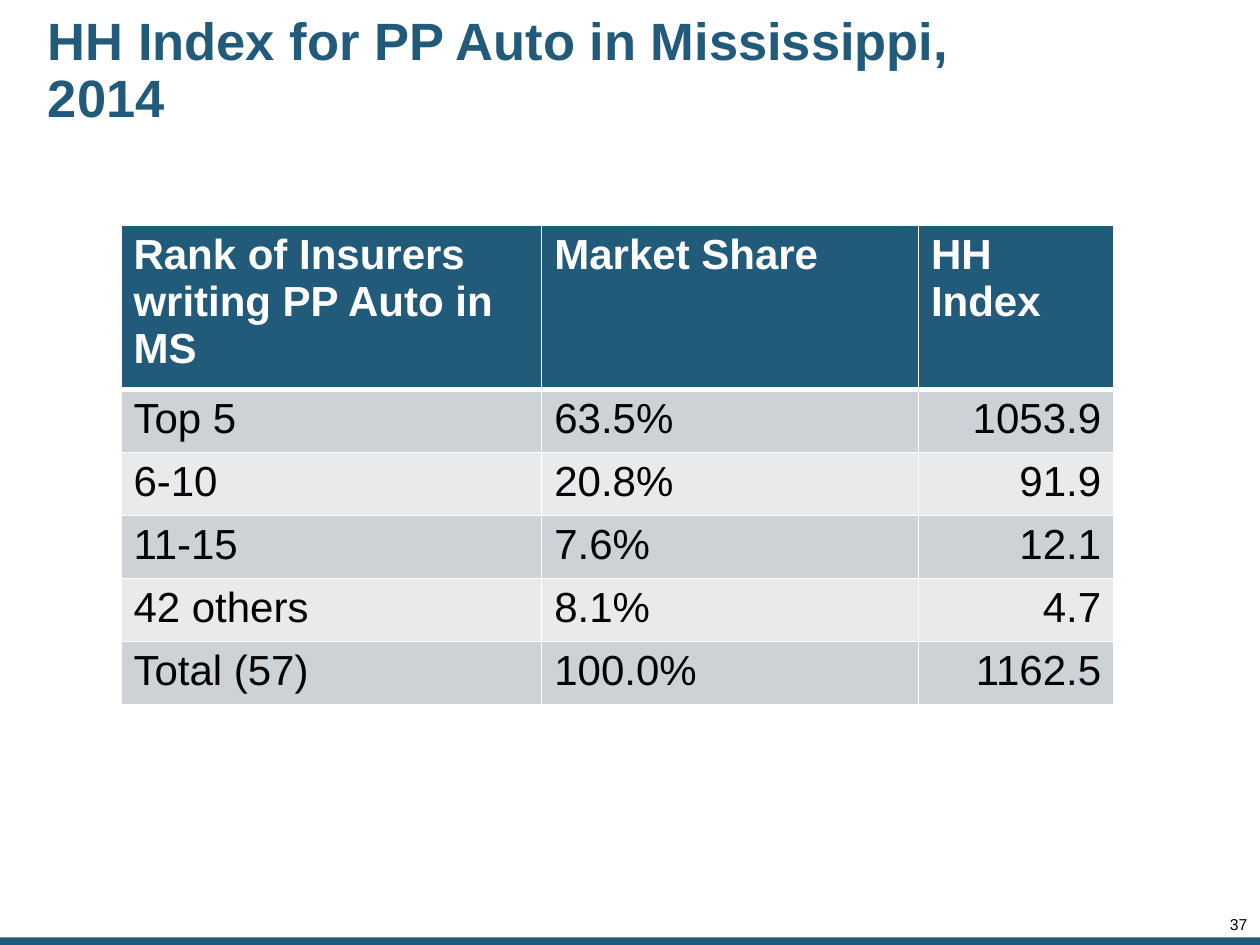
from pptx import Presentation
from pptx.dml.color import RGBColor
from pptx.enum.shapes import MSO_SHAPE
from pptx.enum.text import MSO_ANCHOR, PP_ALIGN
from pptx.oxml.ns import qn
from pptx.util import Inches, Pt
from lxml import etree

RECTANGLE = MSO_SHAPE.RECTANGLE
MIDDLE, TOP = MSO_ANCHOR.MIDDLE, MSO_ANCHOR.TOP
LEFT, RIGHT = PP_ALIGN.LEFT, PP_ALIGN.RIGHT

FONT = "Arial"
COLORS = {"blue": "225A7A", "white": "FFFFFF", "black": "000000",
          "dark_band": "CDD2D7", "light_band": "E8EAEC"}

TITLE = "HH Index for PP Auto in Mississippi, 2014"
PAGE_NUMBER = "37"
ROWS = [
    ("Rank of Insurers writing PP Auto in MS", "Market Share", "HH Index"),
    ("Top 5", "63.5%", "1053.9"),
    ("6-10", "20.8%", "91.9"),
    ("11-15", "7.6%", "12.1"),
    ("42 others", "8.1%", "4.7"),
    ("Total (57)", "100.0%", "1162.5"),
]
COLUMN_WIDTHS = (3.34, 2.99, 1.55)
HEADER_HEIGHT, ROW_HEIGHT = 1.21, 0.47


def rgb(name):
    return RGBColor.from_string(COLORS[name])


def write(tf, text, size, color, bold=False, align=LEFT):
    tf.text = text
    p = tf.paragraphs[0]
    p.alignment = align
    font = p.runs[0].font
    font.name, font.size, font.bold = FONT, Pt(size), bold
    font.color.rgb = rgb(color)
    return p


def add_text(slide, box, text, size, color, inset, anchor, spacing, **style):
    tf = slide.shapes.add_textbox(*map(Inches, box)).text_frame
    tf.word_wrap = True
    tf.vertical_anchor = anchor
    tf.margin_left = tf.margin_right = Inches(inset)
    tf.margin_top = tf.margin_bottom = Inches(inset)
    write(tf, text, size, color, **style).line_spacing = spacing


def set_borders(cell, top, bottom):
    """Draw white borders; must run before the cell's fill is set."""
    tc_pr = cell._tc.get_or_add_tcPr()
    for side, width in (("L", 1), ("R", 1), ("T", top), ("B", bottom)):
        ln = etree.SubElement(tc_pr, qn(f"a:ln{side}"), w=str(Pt(width)))
        fill = etree.SubElement(ln, qn("a:solidFill"))
        etree.SubElement(fill, qn("a:srgbClr"), val=COLORS["white"])


def add_market_table(slide):
    height = HEADER_HEIGHT + ROW_HEIGHT * (len(ROWS) - 1)
    table = slide.shapes.add_table(
        len(ROWS), len(COLUMN_WIDTHS), Inches(0.96), Inches(1.79),
        Inches(sum(COLUMN_WIDTHS)), Inches(height)).table
    for column, width in zip(table.columns, COLUMN_WIDTHS):
        column.width = Inches(width)
    for i, values in enumerate(ROWS):
        header = i == 0
        table.rows[i].height = Inches(HEADER_HEIGHT if header else ROW_HEIGHT)
        band = "blue" if header else "dark_band" if i % 2 else "light_band"
        for j, value in enumerate(values):
            cell = table.cell(i, j)
            set_borders(cell, top=3 if i == 1 else 1, bottom=3 if header else 1)
            cell.fill.solid()
            cell.fill.fore_color.rgb = rgb(band)
            number = j == len(values) - 1 and not header
            write(cell.text_frame, value, 24, "white" if header else "black",
                  bold=header, align=RIGHT if number else LEFT)


def main():
    prs = Presentation()
    prs.slide_width, prs.slide_height = Inches(10), Inches(7.5)
    slide = prs.slides.add_slide(prs.slide_layouts[6])

    bar = slide.shapes.add_shape(RECTANGLE, 0, Inches(7.44), Inches(10), Inches(0.06))
    bar.shadow.inherit = False
    bar.fill.solid()
    bar.fill.fore_color.rgb = rgb("blue")
    bar.line.fill.background()

    add_text(slide, (0.33, 0.1, 8.09, 0.94), TITLE, 30, "blue",
             inset=0.05, anchor=MIDDLE, spacing=0.9, bold=True)
    add_market_table(slide)
    add_text(slide, (9.41, 7.28, 0.49, 0.13), PAGE_NUMBER, 9, "black",
             inset=0, anchor=TOP, spacing=0.85, align=RIGHT)
    prs.save("out.pptx")


if __name__ == "__main__":
    main()
